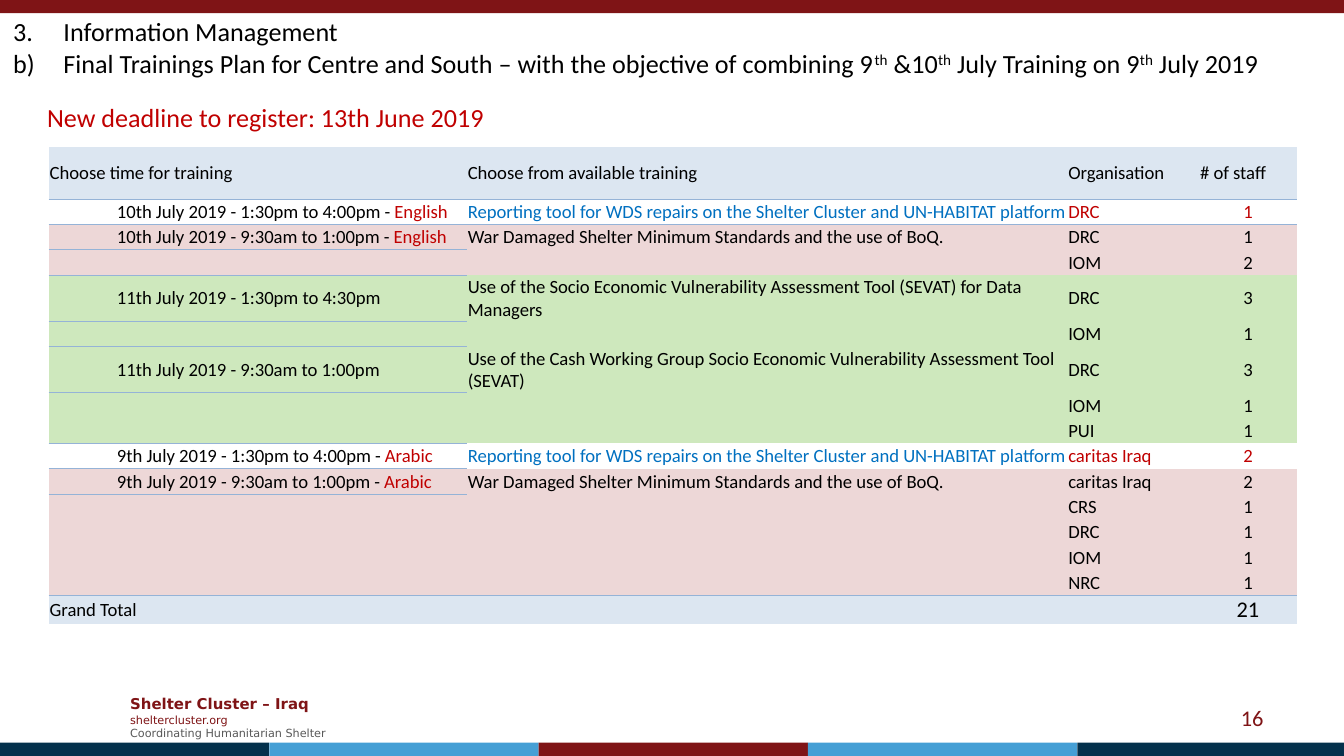
from lxml import etree
from pptx import Presentation
from pptx.dml.color import RGBColor
from pptx.enum.shapes import MSO_SHAPE
from pptx.enum.text import MSO_ANCHOR, PP_ALIGN
from pptx.oxml.ns import qn
from pptx.util import Cm, Pt

RECTANGLE = MSO_SHAPE.RECTANGLE
MIDDLE, TOP = MSO_ANCHOR.MIDDLE, MSO_ANCHOR.TOP
LEFT, CENTER, RIGHT = PP_ALIGN.LEFT, PP_ALIGN.CENTER, PP_ALIGN.RIGHT

BLACK = RGBColor(0x00, 0x00, 0x00)
MAROON = RGBColor(0x7F, 0x14, 0x16)
NAVY = RGBColor(0x04, 0x31, 0x4C)
SKY = RGBColor(0x45, 0x9F, 0xD5)
GREY = RGBColor(0x59, 0x59, 0x59)
RED = RGBColor(0xC0, 0x00, 0x00)
BLUE = RGBColor(0x00, 0x70, 0xC0)
PALE_BLUE = RGBColor(0xDC, 0xE6, 0xF1)
PINK = RGBColor(0xED, 0xD7, 0xD7)
GREEN = RGBColor(0xCE, 0xE8, 0xBD)
RULE_BLUE = RGBColor(0x95, 0xB3, 0xD7)

NO_GRID_STYLE = "{2D5ABB26-0587-4C30-8999-92F81FD0307C}"
COLUMN_WIDTHS = (7.9, 11.35, 2.49, 1.85)
HEADER_HEIGHT, ROW_HEIGHT = 0.99, 0.48
HEADINGS = ("Choose time for training", "Choose from available training", "Organisation", "# of staff")

REPORTING = "Reporting tool for WDS repairs on the Shelter Cluster and UN-HABITAT platform"
STANDARDS = "War Damaged Shelter Minimum Standards and the use of BoQ."
SEVAT_DATA = "Use of the Socio Economic Vulnerability Assessment Tool (SEVAT) for Data Managers"
SEVAT_CASH = "Use of the Cash Working Group Socio Economic Vulnerability Assessment Tool (SEVAT)"

# time, language, training, fill, staff by organisation
SESSIONS = (
    ("10th July 2019 - 1:30pm to 4:00pm - ", "English", REPORTING, None, (("DRC", 1),)),
    ("10th July 2019 - 9:30am to 1:00pm - ", "English", STANDARDS, PINK, (("DRC", 1), ("IOM", 2))),
    ("11th July 2019 - 1:30pm to 4:30pm", "", SEVAT_DATA, GREEN, (("DRC", 3), ("IOM", 1))),
    ("11th July 2019 - 9:30am to 1:00pm", "", SEVAT_CASH, GREEN,
     (("DRC", 3), ("IOM", 1), ("PUI", 1))),
    ("9th July 2019 - 1:30pm to 4:00pm - ", "Arabic", REPORTING, None, (("caritas Iraq", 2),)),
    ("9th July 2019 - 9:30am to 1:00pm - ", "Arabic", STANDARDS, PINK,
     (("caritas Iraq", 2), ("CRS", 1), ("DRC", 1), ("IOM", 1), ("NRC", 1))),
)


class SlideBuilder:
    def __init__(self, slide, font="Calibri"):
        self.slide = slide
        self.font = font

    def style(self, paragraph, size, color, font=None, bold=False):
        paragraph.font.name = font or self.font
        paragraph.font.size = Pt(size)
        paragraph.font.bold = bold
        paragraph.font.color.rgb = color

    def bar(self, left, top, width, height, color):
        shape = self.slide.shapes.add_shape(RECTANGLE, Cm(left), Cm(top), Cm(width), Cm(height))
        shape.shadow.inherit = False
        shape.fill.solid()
        shape.fill.fore_color.rgb = color
        shape.line.fill.background()

    def text_box(self, left, top, width, height, anchor=MIDDLE, wrap=True):
        box = self.slide.shapes.add_textbox(Cm(left), Cm(top), Cm(width), Cm(height))
        frame = box.text_frame
        frame.word_wrap = wrap
        frame.vertical_anchor = anchor
        return frame

    def text(self, frame, text, size, color, align=LEFT, font=None, bold=False):
        """Fill the frame's empty first paragraph, or add another one."""
        paragraph = frame.paragraphs[0]
        if paragraph.runs:
            paragraph = frame.add_paragraph()
        paragraph.add_run().text = text
        paragraph.alignment = align
        self.style(paragraph, size, color, font, bold)
        return paragraph

    def numbered(self, frame, scheme, start, parts, size):
        """Add a numbered line in which every second part is superscript."""
        paragraph = frame.paragraphs[0]
        if paragraph.runs:
            paragraph = frame.add_paragraph()
        properties = paragraph._p.get_or_add_pPr()
        properties.set("marL", str(Cm(0.95)))
        properties.set("indent", str(Cm(-0.95)))
        etree.SubElement(properties, qn("a:buAutoNum"), type=scheme, startAt=str(start))
        self.style(paragraph, size, BLACK)
        for index, part in enumerate(parts):
            run = paragraph.add_run()
            run.text = part
            if index % 2:
                run.font._element.set("baseline", "30000")

    def table(self, left, top, widths, heights):
        width, height = Cm(sum(widths)), Cm(sum(heights))
        table = self.slide.shapes.add_table(
            len(heights), len(widths), Cm(left), Cm(top), width, height).table
        table.first_row = table.horz_banding = False
        table._tbl.tblPr.find(qn("a:tableStyleId")).text = NO_GRID_STYLE
        for column, column_width in zip(table.columns, widths):
            column.width = Cm(column_width)
        for row, row_height in zip(table.rows, heights):
            row.height = Cm(row_height)
        return table

    def rule_below(self, table, row, column):
        """Draw the line between a cell and the one under it; call before filling cells."""
        for cell, edge in ((table.cell(row, column), "a:lnB"), (table.cell(row + 1, column), "a:lnT")):
            line = etree.SubElement(cell._tc.get_or_add_tcPr(), qn(edge), w=str(Pt(0.5)))
            fill = etree.SubElement(line, qn("a:solidFill"))
            etree.SubElement(fill, qn("a:srgbClr"), val=str(RULE_BLUE))

    def cell(self, cell, text, fill, color=BLACK, size=10, align=LEFT, indent=0, ending=""):
        cell.margin_left = cell.margin_right = cell.margin_top = Cm(0.02)
        cell.margin_bottom = 0
        cell.vertical_anchor = MIDDLE
        if fill is None:
            cell.fill.background()
        else:
            cell.fill.solid()
            cell.fill.fore_color.rgb = fill
        paragraph = cell.text_frame.paragraphs[0]
        paragraph.alignment = align
        self.style(paragraph, size, color)
        if indent:
            paragraph.level = 1
            paragraph._p.get_or_add_pPr().set("marL", str(Cm(indent)))
            paragraph._p.get_or_add_pPr().set("indent", "0")
        if text:
            paragraph.add_run().text = text
        else:
            etree.SubElement(paragraph._p, qn("a:endParaRPr"), sz=str(size * 100))
        if ending:
            run = paragraph.add_run()
            run.text = ending
            run.font.color.rgb = RED


def add_training_table(builder):
    row_count = sum(len(session[-1]) for session in SESSIONS)
    heights = [HEADER_HEIGHT] + [ROW_HEIGHT] * (row_count + 1)
    table = builder.table(0.92, 2.77, COLUMN_WIDTHS, heights)

    columns = range(len(COLUMN_WIDTHS))
    last_row = 0
    for session_number in range(len(SESSIONS) + 1):
        if session_number:
            last_row += len(SESSIONS[session_number - 1][-1])
        full_width = session_number in (0, len(SESSIONS))
        for column in columns if full_width else columns[:1]:
            builder.rule_below(table, last_row, column)

    for column, heading in enumerate(HEADINGS):
        builder.cell(table.cell(0, column), heading, PALE_BLUE)

    row = 1
    for time, language, training, fill, staff in SESSIONS:
        training_color, staff_color = (BLUE, RED) if fill is None else (BLACK, BLACK)
        for index, (organisation, count) in enumerate(staff):
            first = index == 0
            builder.cell(table.cell(row, 0), time if first else "", fill,
                         indent=1.27 if first else 0, ending=language if first else "")
            builder.cell(table.cell(row, 1), training if first else "", fill, training_color)
            builder.cell(table.cell(row, 2), organisation, fill, staff_color)
            builder.cell(table.cell(row, 3), str(count), fill, staff_color, align=CENTER)
            row += 1

    total = sum(count for session in SESSIONS for _, count in session[-1])
    for column, text in enumerate(("Grand Total", "", "")):
        builder.cell(table.cell(row, column), text, PALE_BLUE)
    builder.cell(table.cell(row, 3), str(total), PALE_BLUE, size=12, align=CENTER)


def main():
    presentation = Presentation()
    presentation.slide_width, presentation.slide_height = Cm(25.4), Cm(14.29)
    builder = SlideBuilder(presentation.slides.add_slide(presentation.slide_layouts[6]))

    footer = builder.text_box(2.21, 13, 4.4, 1.12)
    builder.text(footer, "Shelter Cluster – Iraq", 8, MAROON, font="DejaVu Sans", bold=True)
    builder.text(footer, "sheltercluster.org", 6, MAROON, font="DejaVu Sans")
    builder.text(footer, "Coordinating Humanitarian Shelter", 6, GREY, font="DejaVu Sans")

    builder.bar(0, 0, 25.4, 0.25, MAROON)
    for index, color in enumerate((NAVY, SKY, MAROON, SKY, NAVY)):
        builder.bar(index * 5.09, 14.04, 5.09, 0.25, color)

    page_number = builder.text_box(18.21, 13.18, 5.92, 0.76)
    builder.text(page_number, "16", 12, MAROON, align=RIGHT)

    title = builder.text_box(0, 0.38, 25.4, 1.02)
    builder.numbered(title, "arabicPeriod", 3, ("Information Management",), 14)
    builder.numbered(title, "alphaLcParenR", 2, (
        "Final Trainings Plan for Centre and South – with the objective of combining 9", "th",
        " &10", "th", " July Training on 9", "th", " July 2019"), 14)

    deadline = builder.text_box(0.64, 1.8, 8.79, 0.86, anchor=TOP, wrap=False)
    builder.text(deadline, "New deadline to register: 13th June 2019", 14, RED)

    add_training_table(builder)
    presentation.save("out.pptx")


if __name__ == "__main__":
    main()
